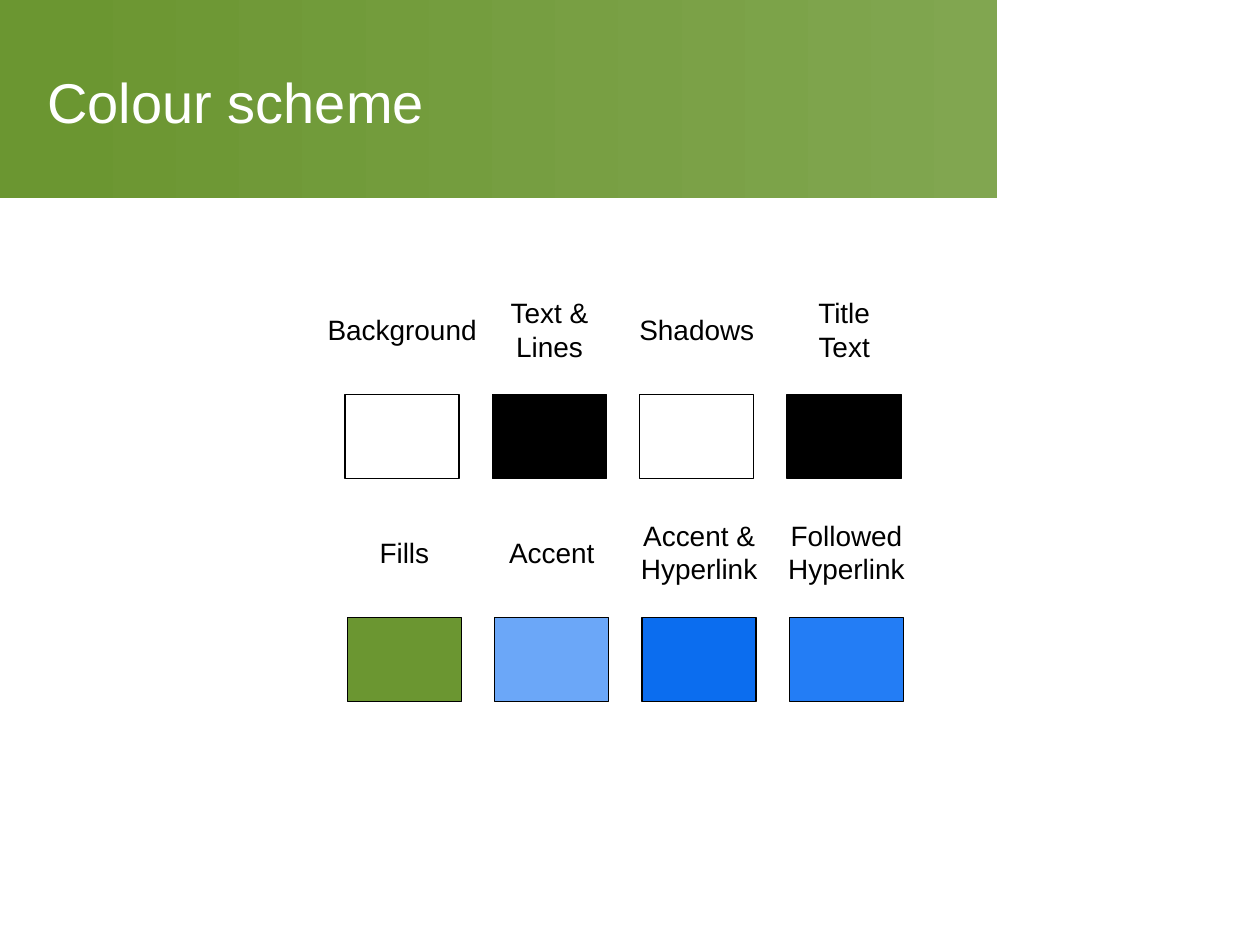
from pptx import Presentation
from pptx.dml.color import RGBColor
from pptx.enum.shapes import MSO_SHAPE
from pptx.enum.text import MSO_ANCHOR, MSO_AUTO_SIZE, PP_ALIGN
from pptx.util import Pt

FONT = "Arial"
BLACK, WHITE, GREEN, PALE_GREEN = "000000", "FFFFFF", "6B9631", "81A650"
SWATCH_WIDTH, SWATCH_HEIGHT, PITCH = 65.2, 48.2, 84.2
LABEL_RISE = 37.1  # from the top of a swatch up to the middle of its label

# Left and top of each row, then label, label width and colour of each swatch
ROWS = [
    (197.2, 225.4, [
        ("Background", 100, WHITE),
        ("Text &\nLines", 60.5, BLACK),
        ("Shadows", 80, WHITE),
        ("Title\vText", 45.4, BLACK),
    ]),
    (198.5, 352.7, [
        ("Fills", 42.5, GREEN),
        ("Accent", 63.4, "6BA7F8"),
        ("Accent &\nHyperlink", 80.6, "0B6DEF"),
        ("Followed\nHyperlink", 80.6, "237DF5"),
    ]),
]


def rgb(value):
    return RGBColor.from_string(value)


def format_text(frame, size, colour, alignment):
    for paragraph in frame.paragraphs:
        paragraph.alignment = alignment
        paragraph.font.name = FONT
        paragraph.font.size = Pt(size)
        paragraph.font.color.rgb = rgb(colour)


def add_band(slide):
    """Add the green title band behind everything else."""
    band = slide.shapes.add_shape(MSO_SHAPE.RECTANGLE, 0, 0, Pt(570), Pt(113.4))
    band.shadow.inherit = False
    band.line.fill.background()
    band.fill.gradient()
    band.fill.gradient_angle = 0
    for stop, colour, position in zip(
        band.fill.gradient_stops, (GREEN, PALE_GREEN), (0.05, 1)
    ):
        stop.color.rgb = rgb(colour)
        stop.position = position
    slide.shapes._spTree.insert(2, band._element)


def set_title(slide, text):
    title = slide.shapes.title
    title.left, title.top = Pt(19.8), Pt(21.6)
    title.width, title.height = Pt(538.6), Pt(72.7)
    frame = title.text_frame
    frame.text = text
    frame.vertical_anchor = MSO_ANCHOR.MIDDLE
    format_text(frame, 32, WHITE, PP_ALIGN.LEFT)


def add_swatch(slide, left, top, colour):
    swatch = slide.shapes.add_shape(
        MSO_SHAPE.RECTANGLE, Pt(left), Pt(top), Pt(SWATCH_WIDTH), Pt(SWATCH_HEIGHT)
    )
    swatch.shadow.inherit = False
    swatch.fill.solid()
    swatch.fill.fore_color.rgb = rgb(colour)
    swatch.line.color.rgb = rgb(BLACK)
    swatch.line.width = Pt(0.75)


def add_label(slide, centre, middle, width, text):
    height = 7.4 + 19.3 * len(text.splitlines())
    label = slide.shapes.add_textbox(
        Pt(centre - width / 2), Pt(middle - height / 2), Pt(width), Pt(height)
    )
    frame = label.text_frame
    frame.text = text
    frame.margin_left = frame.margin_right = 0
    frame.word_wrap = False
    frame.auto_size = MSO_AUTO_SIZE.SHAPE_TO_FIT_TEXT
    format_text(frame, 16, BLACK, PP_ALIGN.CENTER)


def main():
    presentation = Presentation()
    presentation.slide_width, presentation.slide_height = Pt(720), Pt(540)
    slide = presentation.slides.add_slide(presentation.slide_layouts[5])
    add_band(slide)
    set_title(slide, "Colour scheme")
    for row_left, top, swatches in ROWS:
        for column, (text, width, colour) in enumerate(swatches):
            left = row_left + column * PITCH
            add_swatch(slide, left, top, colour)
            add_label(slide, left + SWATCH_WIDTH / 2, top - LABEL_RISE, width, text)
    presentation.save("out.pptx")


if __name__ == "__main__":
    main()
